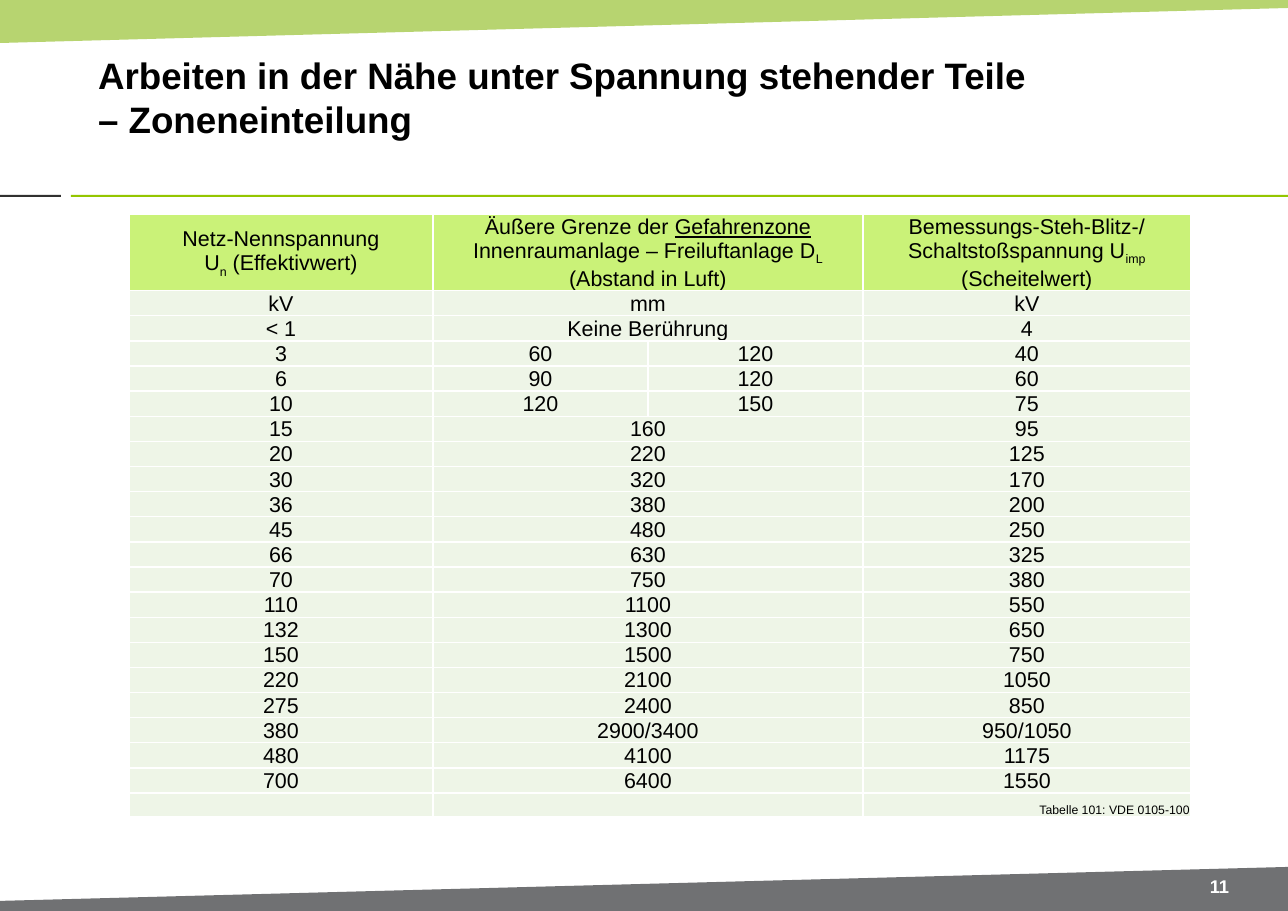
import lxml.etree
import pptx
import pptx.dml.color
import pptx.enum.shapes
import pptx.enum.text
import pptx.oxml.ns
import pptx.util

RGBColor = pptx.dml.color.RGBColor
ALIGN = pptx.enum.text.PP_ALIGN
ANCHOR = pptx.enum.text.MSO_ANCHOR

BLACK = RGBColor(0x00, 0x00, 0x00)
WHITE = RGBColor(0xFF, 0xFF, 0xFF)
LEAF = RGBColor(0x95, 0xC0, 0x2A)
LIME = RGBColor(0x94, 0xC6, 0x00)
CHARCOAL = RGBColor(0x31, 0x31, 0x30)
GREY = RGBColor(0x70, 0x71, 0x73)
HEADER_FILL = RGBColor(0xCA, 0xF2, 0x78)
BODY_FILL = RGBColor(0xEE, 0xF5, 0xE7)

EMU_PER_PX = 8298
PAGE_WIDTH, PAGE_HEIGHT = 1288, 911
COLUMN_WIDTHS = (304, 215, 215, 328)
HEADER_HEIGHT, ROW_HEIGHT = 75, 24

HEADERS = (
    (("Netz-Nennspannung\nU", {}), ("n", {"baseline": -25}), (" (Effektivwert)", {})),
    (("Äußere Grenze der ", {}), ("Gefahrenzone", {"underline": True}),
     (" Innenraumanlage – Freiluftanlage D", {}), ("L", {"baseline": -25}),
     ("\n(Abstand in Luft)", {})),
    (("Bemessungs-Steh-Blitz-/Schaltstoßspannung U", {}), ("imp", {"baseline": -25}),
     (" (Scheitelwert)", {})),
)
ROWS = (
    ("kV", "mm", "kV"),
    ("< 1", "Keine Berührung", "4"),
    ("3", "60", "120", "40"),
    ("6", "90", "120", "60"),
    ("10", "120", "150", "75"),
    ("15", "160", "95"),
    ("20", "220", "125"),
    ("30", "320", "170"),
    ("36", "380", "200"),
    ("45", "480", "250"),
    ("66", "630", "325"),
    ("70", "750", "380"),
    ("110", "1100", "550"),
    ("132", "1300", "650"),
    ("150", "1500", "750"),
    ("220", "2100", "1050"),
    ("275", "2400", "850"),
    ("380", "2900/3400", "950/1050"),
    ("480", "4100", "1175"),
    ("700", "6400", "1550"),
    ("", "", "Tabelle 101: VDE 0105-100"),
)


def px(length):
    """Convert pixels to EMU."""
    return pptx.util.Emu(length * EMU_PER_PX)


def add_element(parent, tag, **attributes):
    """Append a DrawingML element to a parent element."""
    return lxml.etree.SubElement(parent, pptx.oxml.ns.qn(tag), attributes)


def write_text(para, text, size=14, color=BLACK, bold=False, underline=False,
               baseline=0, align=ALIGN.CENTER):
    """Append formatted text to a paragraph, with a line break at each newline."""
    para.alignment = align
    for index, line in enumerate(text.split("\n")):
        if index:
            para.add_line_break()
        if not line:
            continue
        span = para.add_run()
        span.text = line
        span.font.name = "Arial"
        span.font.size = pptx.util.Pt(size)
        span.font.bold = bold
        span.font.underline = underline
        span.font.color.rgb = color
        if baseline:
            span.font._element.set("baseline", str(baseline * 1000))


def paint(shape, color):
    """Give a shape a plain fill without line or shadow."""
    shape.fill.solid()
    shape.fill.fore_color.rgb = color
    shape.line.fill.background()
    shape.shadow.inherit = False


def add_band(page, points, color, opacity=100):
    """Draw a slanted band through the given corners."""
    builder = page.shapes.build_freeform(*points[0], scale=EMU_PER_PX)
    builder.add_line_segments(points[1:], close=True)
    band = builder.convert_to_shape()
    paint(band, color)
    if opacity < 100:
        fill_color = band._element.spPr.find(".//" + pptx.oxml.ns.qn("a:srgbClr"))
        add_element(fill_color, "a:alpha", val=str(opacity * 1000))


def add_frame(page, width, height):
    """Draw the bands at the page edges and the rule under the title."""
    add_band(page, ((0, 0), (width, 0), (width, 8), (0, 43)), LEAF, opacity=67)
    add_band(page, ((0, height), (0, height - 10), (width, height - 44),
                    (width, height)), GREY)
    for left, right, color in ((0, 61, CHARCOAL), (71, width, LIME)):
        rule = page.shapes.add_shape(
            pptx.enum.shapes.MSO_SHAPE.RECTANGLE,
            px(left), px(195), px(right - left), px(2))
        paint(rule, color)


def set_frame(box):
    """Set insets, wrapping and middle anchoring of a text box."""
    frame = box.text_frame
    frame.word_wrap = True
    frame.auto_size = pptx.enum.text.MSO_AUTO_SIZE.NONE
    frame.vertical_anchor = ANCHOR.MIDDLE
    frame.margin_left = frame.margin_right = px(12)
    frame.margin_top = frame.margin_bottom = px(6)
    return frame


def add_title(page, left, top, width, height):
    """Place the page title in its placeholder."""
    box = page.shapes.title
    box.left, box.top, box.width, box.height = map(px, (left, top, width, height))
    write_text(set_frame(box).paragraphs[0],
               "Arbeiten in der Nähe unter Spannung stehender Teile \n– Zoneneinteilung",
               size=24, bold=True, align=ALIGN.LEFT)


def add_page_number(page, left, top, width, height):
    """Place the page number on the lower band."""
    box = page.shapes.add_textbox(*map(px, (left, top, width, height)))
    write_text(set_frame(box).paragraphs[0], "11", size=12, color=WHITE, bold=True)


def format_cell(cell, color):
    """Set margins, white borders and fill of a table cell."""
    cell.margin_left = cell.margin_right = cell.margin_top = px(1)
    cell.margin_bottom = 0
    cell.vertical_anchor = ANCHOR.MIDDLE
    for side in ("a:lnL", "a:lnR", "a:lnT", "a:lnB"):
        line = add_element(cell._tc.tcPr, side, w=str(pptx.util.Pt(1)))
        add_element(add_element(line, "a:solidFill"), "a:srgbClr", val=str(WHITE))
    cell.fill.solid()
    cell.fill.fore_color.rgb = color


def add_zone_table(page, left, top):
    """Place the table of danger zone limits."""
    row_count = len(ROWS) + 1
    height = HEADER_HEIGHT + len(ROWS) * ROW_HEIGHT
    table = page.shapes.add_table(
        row_count, len(COLUMN_WIDTHS),
        *map(px, (left, top, sum(COLUMN_WIDTHS), height))).table
    table.first_row = table.horz_banding = False
    for column, width in zip(table.columns, COLUMN_WIDTHS):
        column.width = px(width)
    body = [[((text, {}),) for text in row] for row in ROWS]
    for index, contents in enumerate((HEADERS, *body)):
        table.rows[index].height = px(ROW_HEIGHT if index else HEADER_HEIGHT)
        cells = [table.cell(index, column) for column in range(len(COLUMN_WIDTHS))]
        for cell in cells:
            format_cell(cell, BODY_FILL if index else HEADER_FILL)
        if len(contents) < len(cells):
            cells[1].merge(cells[2])
            del cells[2]
        is_source = index == row_count - 1
        style = {"size": 8, "align": ALIGN.RIGHT} if is_source else {}
        for cell, spans in zip(cells, contents):
            para = cell.text_frame.paragraphs[0]
            for text, keywords in spans:
                write_text(para, text, **style, **keywords)
            if is_source:
                cell.vertical_anchor = ANCHOR.BOTTOM
                add_element(para._p, "a:endParaRPr", sz="800")


def add_zone_page(deck):
    """Add the page on zones near live parts."""
    page = deck.slides.add_slide(deck.slide_layouts[5])
    add_frame(page, PAGE_WIDTH, PAGE_HEIGHT)
    add_title(page, 86, 31, 1012, 131)
    add_page_number(page, 1182, 870, 75, 32)
    add_zone_table(page, 129, 214)


def main():
    """Build and save the deck."""
    deck = pptx.Presentation()
    deck.slide_width, deck.slide_height = px(PAGE_WIDTH), px(PAGE_HEIGHT)
    add_zone_page(deck)
    deck.save("out.pptx")


if __name__ == "__main__":
    main()
